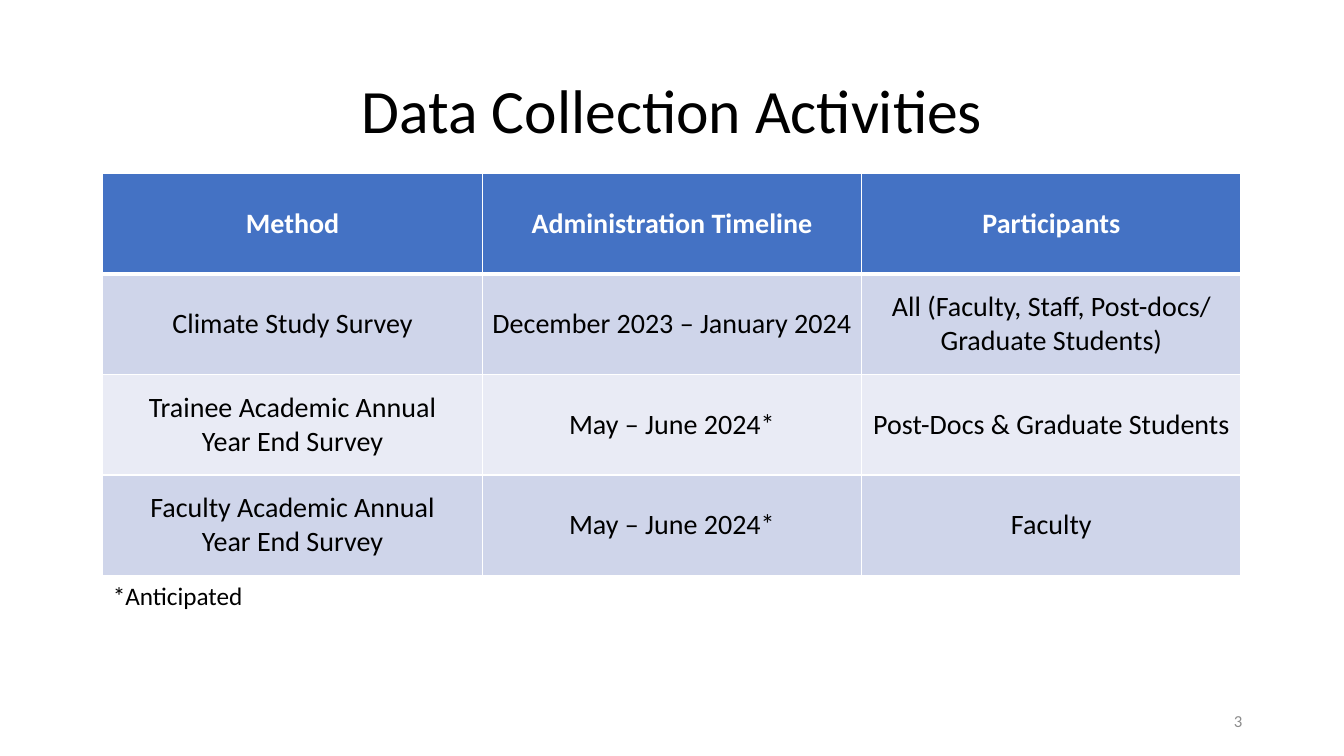
from dataclasses import dataclass

import lxml.etree
import pptx
import pptx.dml.color
import pptx.enum.text
import pptx.oxml.ns
import pptx.util

Inches = pptx.util.Inches
Pt = pptx.util.Pt
RGBColor = pptx.dml.color.RGBColor
Align = pptx.enum.text.PP_ALIGN
Anchor = pptx.enum.text.MSO_ANCHOR

FONT = "Calibri"
BLACK = RGBColor(0x00, 0x00, 0x00)
WHITE = RGBColor(0xFF, 0xFF, 0xFF)
GRAY = RGBColor(0x8C, 0x8C, 0x8C)
HEADER_BLUE = RGBColor(0x44, 0x72, 0xC4)
BAND_DARK = RGBColor(0xCF, 0xD5, 0xEA)
BAND_LIGHT = RGBColor(0xE9, 0xEB, 0xF5)

TABLE_LEFT, TABLE_TOP = 1.02, 1.72
TABLE_WIDTH, TABLE_HEIGHT = 11.29, 3.99


@dataclass(frozen=True)
class Label:
    text: str
    left: float
    top: float
    width: float
    height: float
    size: int
    color: RGBColor = BLACK
    align: Align = Align.LEFT
    anchor: Anchor = Anchor.MIDDLE
    line_spacing: float = 1.0


@dataclass(frozen=True)
class Activity:
    method: str
    timeline: str
    participants: str


LABELS = [
    Label("Data Collection Activities", 0.92, 0.4, 11.5, 1.45, 44,
          align=Align.CENTER, line_spacing=0.9),
    Label("3", 9.42, 6.95, 3, 0.4, 12, GRAY, Align.RIGHT),
    Label("*Anticipated", TABLE_LEFT, TABLE_TOP + TABLE_HEIGHT, 4.01, 0.4, 18,
          anchor=Anchor.TOP),
]

HEADINGS = Activity("Method", "Administration Timeline", "Participants")
ACTIVITIES = [
    Activity("Climate Study Survey", "December 2023 – January 2024",
             "All (Faculty, Staff, Post-docs/ Graduate Students)"),
    Activity("Trainee Academic Annual\nYear End Survey", "May – June 2024*",
             "Post-Docs & Graduate Students"),
    Activity("Faculty Academic Annual\nYear End Survey", "May – June 2024*",
             "Faculty"),
]


def write_text(frame, text: str, size: int, color: RGBColor, align: Align,
               bold: bool = False, line_spacing: float = 1.0) -> None:
    """Fill a text frame, one paragraph per line of text."""
    for index, line in enumerate(text.split("\n")):
        para = frame.add_paragraph() if index else frame.paragraphs[0]
        para.alignment = align
        para.line_spacing = line_spacing
        span = para.add_run()
        span.text = line
        span.font.name = FONT
        span.font.size = Pt(size)
        span.font.bold = bold
        span.font.color.rgb = color


def add_label(page, label: Label) -> None:
    box = page.shapes.add_textbox(Inches(label.left), Inches(label.top),
                                  Inches(label.width), Inches(label.height))
    frame = box.text_frame
    frame.word_wrap = True
    frame.vertical_anchor = label.anchor
    write_text(frame, label.text, label.size, label.color, label.align,
               line_spacing=label.line_spacing)


def set_borders(cell, top: int, bottom: int) -> None:
    """Draw white cell borders; top and bottom are widths in points."""
    properties = cell._tc.get_or_add_tcPr()
    widths = {"a:lnL": 1, "a:lnR": 1, "a:lnT": top, "a:lnB": bottom}
    for position, (tag, width) in enumerate(widths.items()):
        line = lxml.etree.Element(pptx.oxml.ns.qn(tag), w=str(Pt(width)))
        fill = lxml.etree.SubElement(line, pptx.oxml.ns.qn("a:solidFill"))
        lxml.etree.SubElement(fill, pptx.oxml.ns.qn("a:srgbClr"), val=str(WHITE))
        properties.insert(position, line)


def add_activity_table(page) -> None:
    rows = [HEADINGS, *ACTIVITIES]
    table = page.shapes.add_table(
        len(rows), 3, Inches(TABLE_LEFT), Inches(TABLE_TOP),
        Inches(TABLE_WIDTH), Inches(TABLE_HEIGHT)).table
    for row_index, activity in enumerate(rows):
        is_header = row_index == 0
        band = BAND_DARK if row_index % 2 else BAND_LIGHT
        texts = (activity.method, activity.timeline, activity.participants)
        for column_index, text in enumerate(texts):
            cell = table.cell(row_index, column_index)
            cell.fill.solid()
            cell.fill.fore_color.rgb = HEADER_BLUE if is_header else band
            cell.vertical_anchor = Anchor.MIDDLE
            write_text(cell.text_frame, text, 20, WHITE if is_header else BLACK,
                       Align.CENTER, bold=is_header)
            set_borders(cell, top=3 if row_index == 1 else 1,
                        bottom=3 if is_header else 1)


def main() -> None:
    deck = pptx.Presentation()
    deck.slide_width = Inches(13.33)
    deck.slide_height = Inches(7.5)
    page = deck.slides.add_slide(deck.slide_layouts[6])
    add_activity_table(page)
    for label in LABELS:
        add_label(page, label)
    deck.save("out.pptx")


if __name__ == "__main__":
    main()
